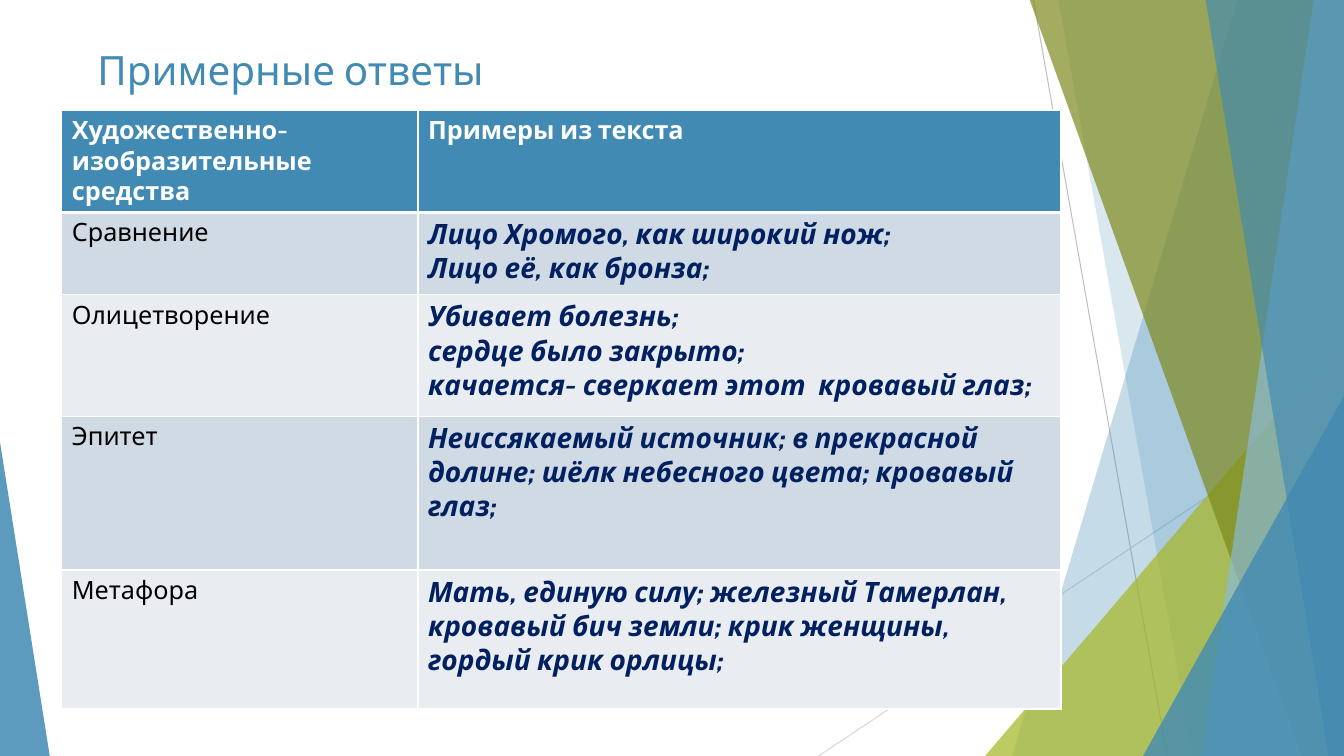
from lxml.etree import SubElement
from pptx import Presentation
from pptx.dml.color import RGBColor
from pptx.enum.shapes import MSO_CONNECTOR, MSO_SHAPE
from pptx.enum.text import MSO_ANCHOR, MSO_AUTO_SIZE, PP_ALIGN
from pptx.oxml.ns import qn
from pptx.util import Inches, Pt

BLUE = RGBColor(0x41, 0x8A, 0xB3)
PALE_BLUE = RGBColor(0x8A, 0xBA, 0xD4)
LIME = RGBColor(0xA6, 0xB7, 0x27)
OLIVE = RGBColor(0x7D, 0x89, 0x1D)
NAVY = RGBColor(0x00, 0x20, 0x60)
BLACK = RGBColor(0x00, 0x00, 0x00)
WHITE = RGBColor(0xFF, 0xFF, 0xFF)
GREY = RGBColor(0xBF, 0xBF, 0xBF)
LIGHT_GREY = RGBColor(0xD9, 0xD9, 0xD9)
ROW_DARK = RGBColor(0xCF, 0xDA, 0xE5)
ROW_LIGHT = RGBColor(0xE9, 0xED, 0xF2)

HEADINGS = ("Художественно-изобразительные средства", "Примеры из текста")
DEVICES = (
    ("Сравнение", "Лицо Хромого, как широкий нож;\nЛицо её, как бронза;"),
    ("Олицетворение", "Убивает болезнь;\nсердце было закрыто;\n"
                      "качается- сверкает этот  кровавый глаз;"),
    ("Эпитет", "Неиссякаемый источник; в прекрасной долине; "
               "шёлк небесного цвета; кровавый глаз;"),
    ("Метафора", "Мать, единую силу; железный Тамерлан, кровавый бич земли; "
                 "крик женщины, гордый крик орлицы;"),
)


class Page:
    """One slide with its style; lengths are percentages of the slide's size."""

    font = "Cabin"

    def __init__(self, deck):
        self.width, self.height = deck.slide_width, deck.slide_height
        self.slide = deck.slides.add_slide(deck.slide_layouts[5])
        self.shapes = self.slide.shapes

    def x(self, share):
        return round(self.width * share / 100)

    def y(self, share):
        return round(self.height * share / 100)

    def box(self, left, top, width, height):
        return self.x(left), self.y(top), self.x(width), self.y(height)

    def style(self, frame, size, color, bold=False, italic=False):
        for paragraph in frame.paragraphs:
            for run in paragraph.runs:
                font = run.font
                font.name, font.size = self.font, Pt(size)
                font.bold, font.italic = bold, italic
                font.color.rgb = color

    def tint(self, facet, color, opacity):
        facet.shadow.inherit = False
        facet.line.fill.background()
        facet.fill.solid()
        facet.fill.fore_color.rgb = color
        shade = facet.fill._xPr.find(".//" + qn("a:srgbClr"))
        SubElement(shade, qn("a:alpha")).set("val", str(opacity * 1000))

    def ray(self, start, end, color):
        ray = self.shapes.add_connector(
            MSO_CONNECTOR.STRAIGHT, self.x(start[0]), self.y(start[1]),
            self.x(end[0]), self.y(end[1]))
        ray.line.color.rgb = color
        ray.line.width = Pt(0.75)
        SubElement(ray._element.spPr, qn("a:effectLst"))

    def band(self, top_left, bottom_left, color, opacity):
        builder = self.shapes.build_freeform(self.x(top_left), self.y(-0.1))
        corners = ((100, -0.1), (100, 100), (bottom_left, 100))
        builder.add_line_segments([(self.x(h), self.y(v)) for h, v in corners])
        self.tint(builder.convert_to_shape(), color, opacity)

    def triangle(self, left, top, width, apex, color, opacity):
        triangle = self.shapes.add_shape(
            MSO_SHAPE.ISOSCELES_TRIANGLE, *self.box(left, top, width, 100 - top))
        triangle.adjustments[0] = apex
        self.tint(triangle, color, opacity)

    def title(self, wording, *place):
        title = self.shapes.title
        title.left, title.top, title.width, title.height = self.box(*place)
        frame = title.text_frame
        frame.text = wording
        frame.word_wrap = True
        frame.auto_size = MSO_AUTO_SIZE.NONE
        frame.vertical_anchor = MSO_ANCHOR.TOP
        frame.paragraphs[0].alignment = PP_ALIGN.LEFT
        self.style(frame, 28.8, BLUE)

    def borders(self, cell, bottom):
        properties = cell._tc.get_or_add_tcPr()
        widths = {"a:lnL": 1, "a:lnR": 1, "a:lnT": 1, "a:lnB": bottom}
        for position, (side, width) in enumerate(widths.items()):
            edge = SubElement(properties, qn(side), w=str(Pt(width)))
            fill = SubElement(edge, qn("a:solidFill"))
            SubElement(fill, qn("a:srgbClr"), val=str(WHITE))
            properties.insert(position, edge)

    def cell(self, cell, wording, background, bottom=1, **look):
        cell.text = wording
        cell.fill.solid()
        cell.fill.fore_color.rgb = background
        self.style(cell.text_frame, **look)
        self.borders(cell, bottom)

    def table(self, left, top, columns, rows):
        place = self.box(left, top, sum(columns), sum(rows))
        table = self.shapes.add_table(len(rows), len(columns), *place).table
        for column, share in zip(table.columns, columns):
            column.width = self.x(share)
        for row, share in zip(table.rows, rows):
            row.height = self.y(share)
        for cell, heading in zip(table.rows[0].cells, HEADINGS):
            self.cell(cell, heading, BLUE, bottom=3, size=18, color=WHITE, bold=True)
        for number, (device, examples) in enumerate(DEVICES, 1):
            shade = ROW_DARK if number % 2 else ROW_LIGHT
            self.cell(table.cell(number, 0), device, shade, size=18, color=BLACK)
            self.cell(table.cell(number, 1), examples, shade,
                      size=20, color=NAVY, bold=True, italic=True)


def main():
    deck = Presentation()
    deck.slide_width, deck.slide_height = Inches(13.33), Inches(7.5)
    page = Page(deck)
    page.ray((76.9, 0), (86.85, 100), GREY)
    page.ray((100, 53.7), (60.9, 100), LIGHT_GREY)
    page.band(92.1, 75.3, BLUE, 30)
    page.band(78.75, 88.75, BLUE, 20)
    page.triangle(73.3, 44.4, 26.7, 1, LIME, 72)
    page.band(76.6, 96.85, OLIVE, 70)
    page.band(97.75, 89.4, PALE_BLUE, 70)
    page.band(89.7, 98.85, BLUE, 65)
    page.triangle(85.05, 52.4, 14.95, 1, BLUE, 80)
    page.triangle(0, 58.5, 3.7, 0, BLUE, 85)
    page.title("Примерные ответы", 6.5, 5.3, 86.25, 6.5)
    page.table(4.6, 14.55, (26.5, 47.85), (10.9, 10.9, 16.1, 20.3, 18.4))
    deck.save("out.pptx")


if __name__ == "__main__":
    main()
